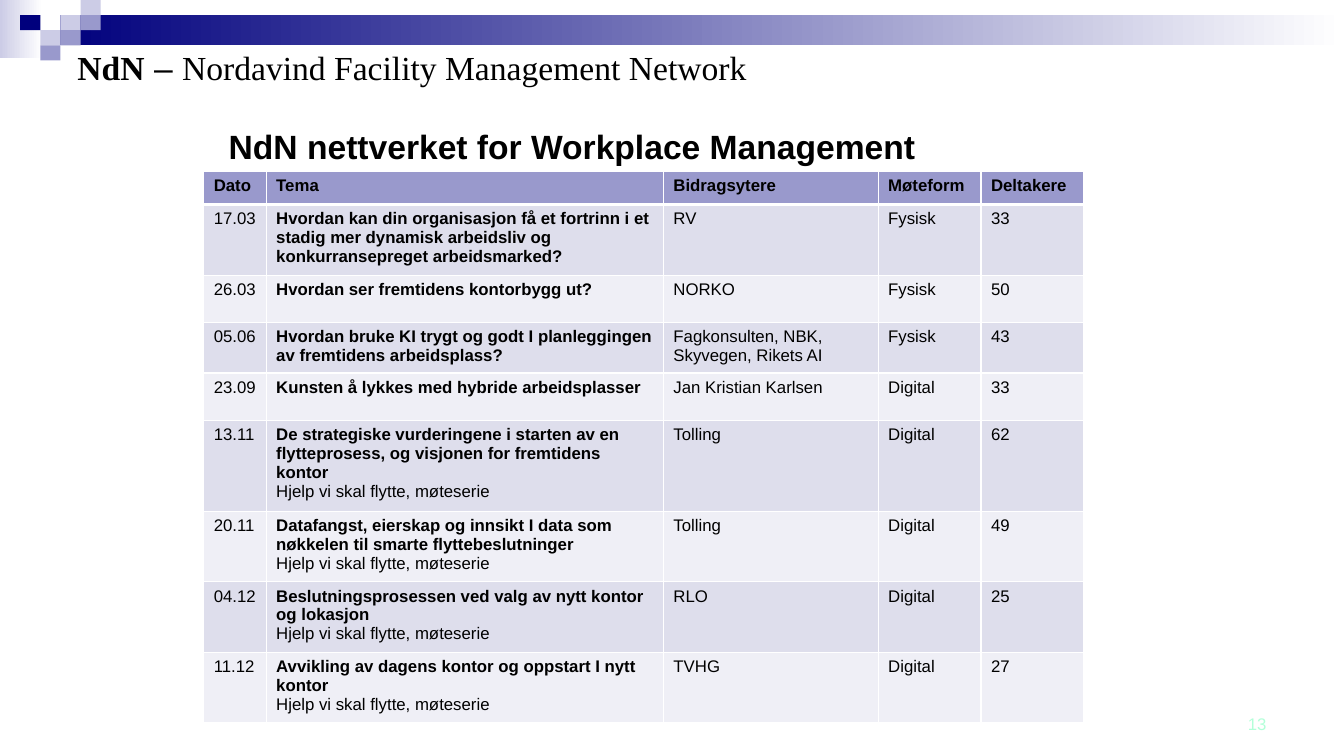
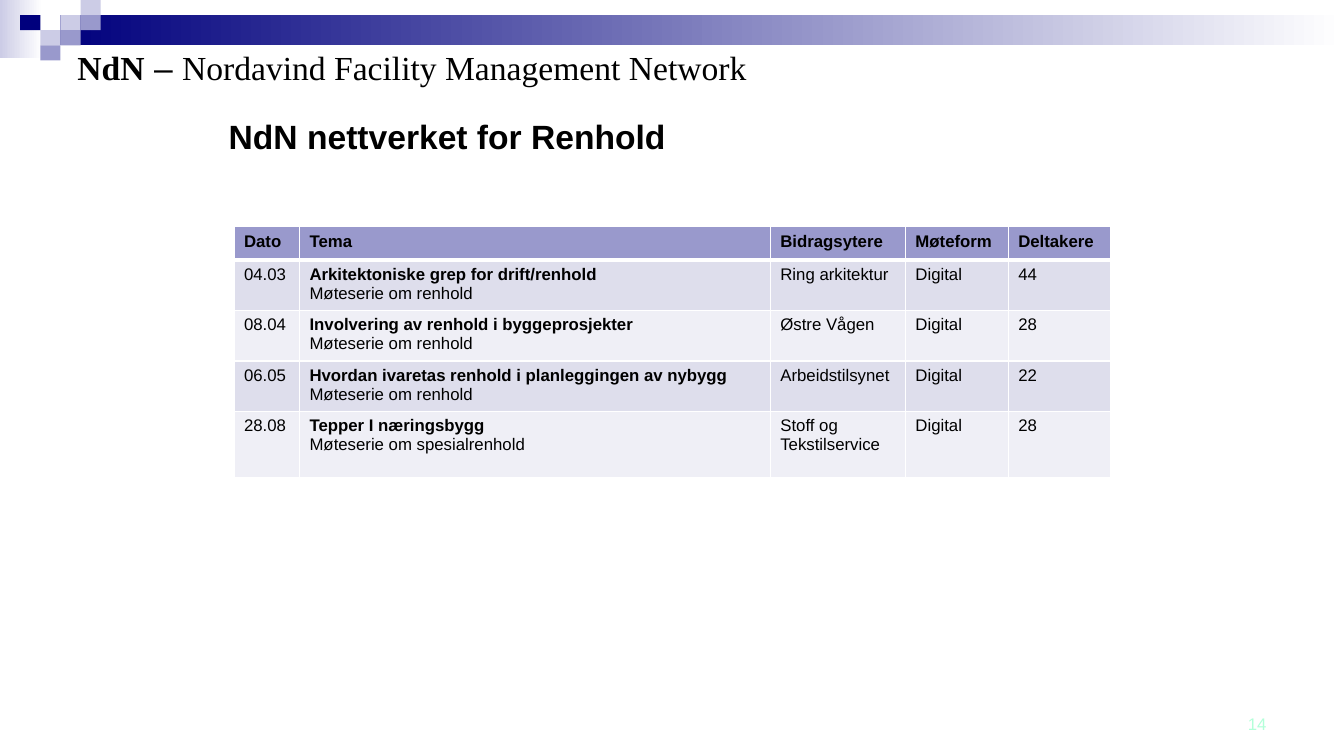
from dataclasses import dataclass

from lxml.etree import SubElement
from pptx import Presentation
from pptx.dml.color import RGBColor
from pptx.enum.shapes import MSO_SHAPE
from pptx.enum.text import MSO_ANCHOR, PP_ALIGN
from pptx.oxml.ns import qn
from pptx.util import Inches, Pt

BLACK = RGBColor(0x00, 0x00, 0x00)
WHITE = RGBColor(0xFF, 0xFF, 0xFF)
NAVY = RGBColor(0x00, 0x00, 0x7D)
LAVENDER = RGBColor(0x99, 0x99, 0xCC)
PALE_LAVENDER = RGBColor(0xCC, 0xCC, 0xE6)
MINT = RGBColor(0xB3, 0xFF, 0xD9)
ROW_FILLS = (RGBColor(0xDE, 0xDE, 0xEC), RGBColor(0xEF, 0xEF, 0xF6))

SANS = "Arial"
SERIF = "Times New Roman"

HEADINGS = ("Dato", "Tema", "Bidragsytere", "Møteform", "Deltakere")
HEADING_HEIGHT = 0.33
ROW_HEIGHTS = {2: 0.47, 3: 0.66, 4: 0.85}
FORM_WIDTH = 1.02
MOVING = "Hjelp vi skal flytte, møteserie"
CLEANING = "Møteserie om renhold"

TILE_WIDTH = 0.2
TILE_HEIGHT = 0.15


@dataclass(frozen=True)
class Tile:
    column: int
    row: int
    color: RGBColor


@dataclass(frozen=True)
class Meeting:
    date: str
    topic: str
    contributor: str
    form: str
    participants: int
    lines: int
    series: str = ""


@dataclass(frozen=True)
class NetworkPage:
    number: int
    title: str
    title_top: float
    table_left: float
    table_top: float
    widths: tuple[float, ...]
    meetings: tuple[Meeting, ...]


TILES = (
    Tile(3, 1, PALE_LAVENDER),
    Tile(4, 0, PALE_LAVENDER),
    Tile(4, 1, LAVENDER),
    Tile(2, 2, PALE_LAVENDER),
    Tile(1, 1, NAVY),
    Tile(3, 2, LAVENDER),
    Tile(2, 3, LAVENDER),
)

PAGES = (
    NetworkPage(
        13, "NdN nettverket for Workplace Management", 1.2, 2.02, 1.7,
        (0.62, 3.94, 2.13, FORM_WIDTH, FORM_WIDTH),
        (
            Meeting("17.03", "Hvordan kan din organisasjon få et fortrinn i et stadig mer "
                    "dynamisk arbeidsliv og konkurransepreget arbeidsmarked?",
                    "RV", "Fysisk", 33, 3),
            Meeting("26.03", "Hvordan ser fremtidens kontorbygg ut?", "NORKO", "Fysisk", 50, 2),
            Meeting("05.06", "Hvordan bruke KI trygt og godt I planleggingen av fremtidens "
                    "arbeidsplass?", "Fagkonsulten, NBK, Skyvegen, Rikets AI", "Fysisk", 43, 2),
            Meeting("23.09", "Kunsten å lykkes med hybride arbeidsplasser",
                    "Jan Kristian Karlsen", "Digital", 33, 2),
            Meeting("13.11", "De strategiske vurderingene i starten av en flytteprosess, og "
                    "visjonen for fremtidens kontor", "Tolling", "Digital", 62, 4, MOVING),
            Meeting("20.11", "Datafangst, eierskap og innsikt I data som nøkkelen til smarte "
                    "flyttebeslutninger", "Tolling", "Digital", 49, 3, MOVING),
            Meeting("04.12", "Beslutningsprosessen ved valg av nytt kontor og lokasjon",
                    "RLO", "Digital", 25, 3, MOVING),
            Meeting("11.12", "Avvikling av dagens kontor og oppstart I nytt kontor",
                    "TVHG", "Digital", 27, 3, MOVING),
        ),
    ),
    NetworkPage(
        14, "NdN nettverket for Renhold", 1.1, 2.32, 2.25,
        (0.65, 4.67, 1.34, FORM_WIDTH, FORM_WIDTH),
        (
            Meeting("04.03", "Arkitektoniske grep for drift/renhold", "Ring arkitektur",
                    "Digital", 44, 2, CLEANING),
            Meeting("08.04", "Involvering av renhold i byggeprosjekter", "Østre Vågen",
                    "Digital", 28, 2, CLEANING),
            Meeting("06.05", "Hvordan ivaretas renhold i planleggingen av nybygg",
                    "Arbeidstilsynet", "Digital", 22, 2, CLEANING),
            Meeting("28.08", "Tepper I næringsbygg", "Stoff og Tekstilservice",
                    "Digital", 28, 3, "Møteserie om spesialrenhold"),
        ),
    ),
)


def add_text(paragraph, text: str, *, size: float = 12, font: str = SANS,
             color: RGBColor = BLACK, bold: bool = False) -> None:
    run = paragraph.add_run()
    run.text = text
    run.font.size = Pt(size)
    run.font.name = font
    run.font.color.rgb = color
    run.font.bold = bold


def add_text_box(slide, left: float, top: float, width: float, height: float,
                 anchor: MSO_ANCHOR = MSO_ANCHOR.TOP):
    box = slide.shapes.add_textbox(Inches(left), Inches(top), Inches(width), Inches(height))
    box.text_frame.word_wrap = True
    box.text_frame.vertical_anchor = anchor
    return box.text_frame.paragraphs[0]


def add_block(slide, left: float, top: float, width: float, height: float,
              color: RGBColor, fade: bool = False) -> None:
    shape = slide.shapes.add_shape(MSO_SHAPE.RECTANGLE, Inches(left), Inches(top),
                                   Inches(width), Inches(height))
    shape.shadow.inherit = False
    shape.line.fill.background()
    if fade:
        shape.fill.gradient()
        shape.fill.gradient_angle = 0
        for stop, stop_color in zip(shape.fill.gradient_stops, (color, WHITE)):
            stop.color.rgb = stop_color
    else:
        shape.fill.solid()
        shape.fill.fore_color.rgb = color


def add_frame(slide, number: int) -> None:
    add_block(slide, 0, 0, 0.42, 0.58, PALE_LAVENDER, fade=True)
    add_block(slide, 0.6, 0.15, 12.73, 0.3, NAVY, fade=True)
    for tile in TILES:
        add_block(slide, tile.column * TILE_WIDTH, tile.row * TILE_HEIGHT,
                  TILE_WIDTH, TILE_HEIGHT, tile.color)
    paragraph = add_text_box(slide, 0.67, 0.42, 12.44, 0.91)
    add_text(paragraph, "NdN", size=24, font=SERIF, bold=True)
    add_text(paragraph, " – ", size=24)
    add_text(paragraph, "Nordavind Facility Management Network", size=24, font=SERIF)
    paragraph = add_text_box(slide, 11.66, 7, 1, 0.36, MSO_ANCHOR.MIDDLE)
    paragraph.alignment = PP_ALIGN.RIGHT
    add_text(paragraph, str(number), color=MINT)


def format_cell(cell, fill: RGBColor, top: float = 1, bottom: float = 1) -> None:
    properties = cell._tc.get_or_add_tcPr()
    for side, width in (("L", 1), ("R", 1), ("T", top), ("B", bottom)):
        line = SubElement(properties, qn(f"a:ln{side}"), w=str(Pt(width)))
        solid = SubElement(line, qn("a:solidFill"))
        SubElement(solid, qn("a:srgbClr"), val=str(WHITE))
    cell.fill.solid()
    cell.fill.fore_color.rgb = fill


def add_meeting_table(slide, page: NetworkPage) -> None:
    heights = [HEADING_HEIGHT] + [ROW_HEIGHTS[meeting.lines] for meeting in page.meetings]
    table = slide.shapes.add_table(
        len(heights), len(HEADINGS), Inches(page.table_left), Inches(page.table_top),
        Inches(sum(page.widths)), Inches(sum(heights))).table
    for column, width in zip(table.columns, page.widths):
        column.width = Inches(width)
    for row, height in zip(table.rows, heights):
        row.height = Inches(height)
    for index, heading in enumerate(HEADINGS):
        cell = table.cell(0, index)
        format_cell(cell, LAVENDER, bottom=3)
        add_text(cell.text_frame.paragraphs[0], heading, bold=True)
    for row_index, meeting in enumerate(page.meetings):
        values = (meeting.date, meeting.topic, meeting.contributor, meeting.form,
                  str(meeting.participants))
        for index, value in enumerate(values):
            cell = table.cell(row_index + 1, index)
            format_cell(cell, ROW_FILLS[row_index % 2], top=1 if row_index else 3)
            is_topic = HEADINGS[index] == "Tema"
            add_text(cell.text_frame.paragraphs[0], value, bold=is_topic)
            if is_topic and meeting.series:
                add_text(cell.text_frame.add_paragraph(), meeting.series)


def main() -> None:
    presentation = Presentation()
    presentation.slide_width = Inches(13.33)
    presentation.slide_height = Inches(7.5)
    for page in PAGES:
        slide = presentation.slides.add_slide(presentation.slide_layouts[6])
        add_frame(slide, page.number)
        title = add_text_box(slide, 2.17, page.title_top, 9, 0.5, MSO_ANCHOR.MIDDLE)
        add_text(title, page.title, size=24, bold=True)
        add_meeting_table(slide, page)
    presentation.save("out.pptx")


if __name__ == "__main__":
    main()
